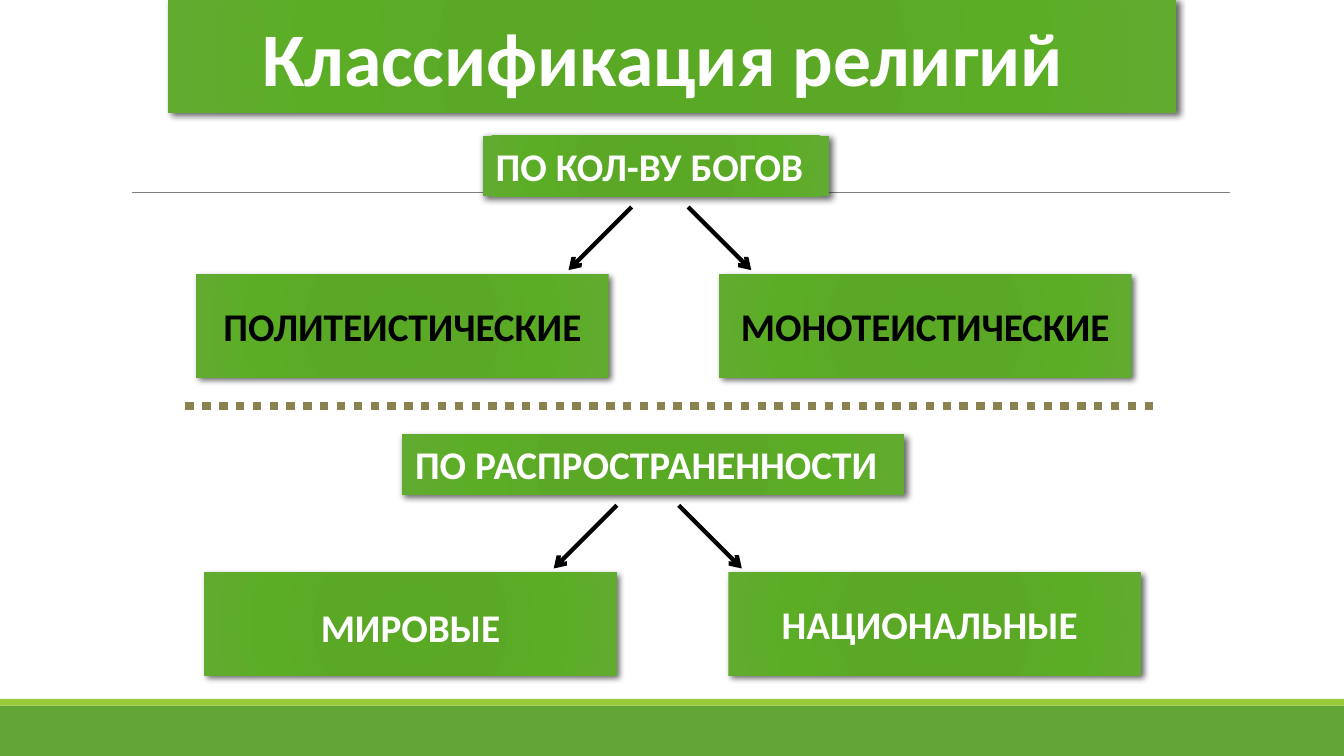
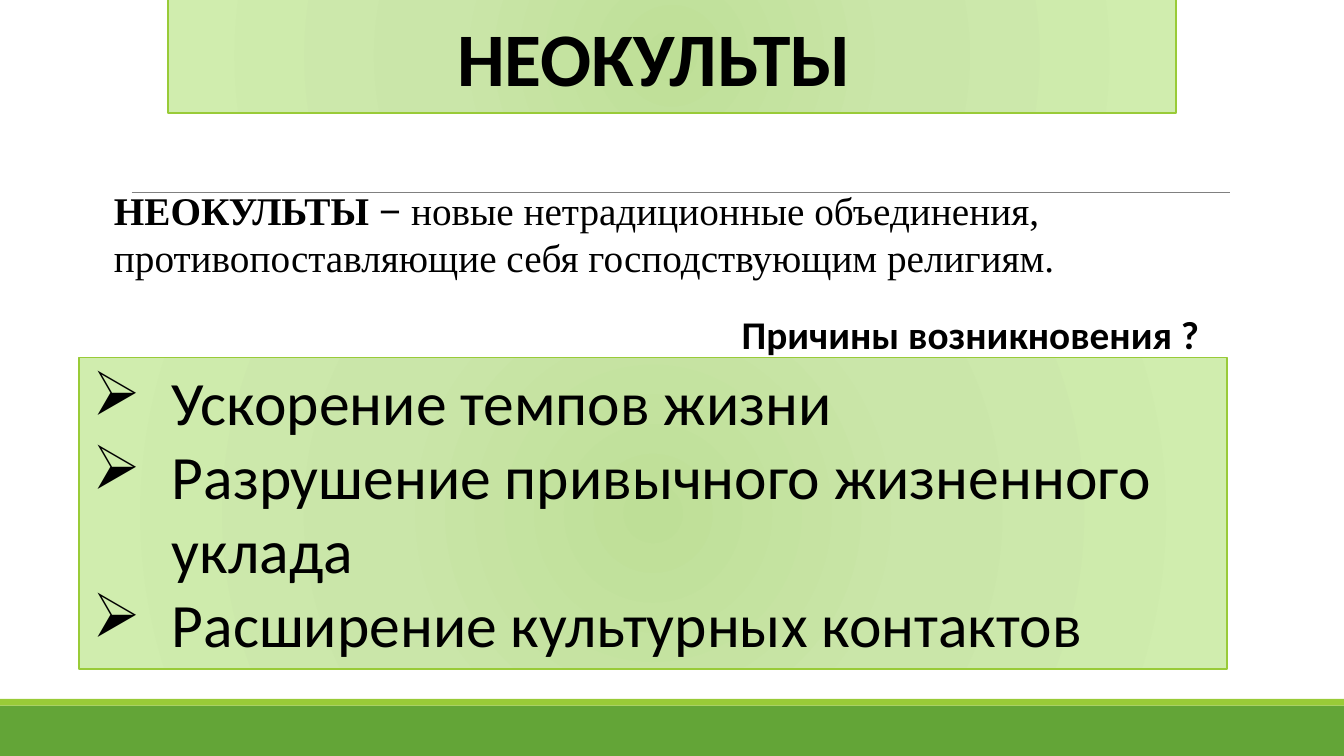
from dataclasses import dataclass

import pptx
import pptx.dml.color
import pptx.enum.dml
import pptx.enum.shapes
import pptx.enum.text
import pptx.oxml
import pptx.oxml.ns
import pptx.util

# The slide is a grid of 100 columns by 56.25 rows, with square cells
COLUMNS, ROWS = 100, 56.25
CELL = pptx.util.Inches(0.1)

ALIGN = pptx.enum.text.PP_ALIGN
ANCHOR = pptx.enum.text.MSO_ANCHOR
NAMESPACE = pptx.oxml.ns.nsdecls("a")


@dataclass(frozen=True)
class Theme:
    white: str = "FFFFFF"
    black: str = "000000"
    band: str = "63A537"
    lime: str = "99CB38"
    rule: str = "808080"
    divider: str = "89814E"
    green: tuple = ((0, "59A924"), (34, "5BA827"), (70, "5BAD25"), (100, "62AB31"))
    pale: tuple = ((0, "BEDF97"), (45, "CAE6A9"), (100, "D0EDAE"))
    sans: str = "Calibri"
    serif: str = "Times New Roman"
    title_size: float = 40.5
    list_size: float = 33
    body_size: float = 21


THEME = Theme()


def cells(count):
    return round(count * CELL)


def rgb(color):
    return pptx.dml.color.RGBColor.from_string(color)


# Effects and fills

def add_effects(shape, shadowed):
    shape.shadow.inherit = False
    if shadowed:
        effects = shape._element.spPr.find(pptx.oxml.ns.qn("a:effectLst"))
        effects.append(pptx.oxml.parse_xml(
            f'<a:outerShdw {NAMESPACE} blurRad="{pptx.util.Pt(3.5)}" dist="{pptx.util.Pt(2)}"'
            ' dir="2700000" algn="tl" rotWithShape="0"><a:srgbClr val="000000">'
            '<a:alpha val="60000"/></a:srgbClr></a:outerShdw>'))


def fill_radial(shape, stops):
    shape.fill.gradient()
    properties = shape._element.spPr
    stop_xml = "".join(
        f'<a:gs pos="{position * 1000}"><a:srgbClr val="{color}"/></a:gs>'
        for position, color in stops)
    gradient = pptx.oxml.parse_xml(
        f'<a:gradFill {NAMESPACE} rotWithShape="1"><a:gsLst>{stop_xml}</a:gsLst>'
        '<a:path path="circle"><a:fillToRect l="50000" t="50000" r="50000" b="50000"/>'
        '</a:path></a:gradFill>')
    properties.replace(properties.find(pptx.oxml.ns.qn("a:gradFill")), gradient)


# Elements

def add_box(slide, area, fill, outline=None, shadowed=False):
    """Rectangle; fill is one colour or a tuple of gradient stops."""
    shape = slide.shapes.add_shape(
        pptx.enum.shapes.MSO_SHAPE.RECTANGLE, *map(cells, area))
    if isinstance(fill, str):
        shape.fill.solid()
        shape.fill.fore_color.rgb = rgb(fill)
    else:
        fill_radial(shape, fill)
    if outline:
        shape.line.color.rgb = rgb(outline)
        shape.line.width = pptx.util.Pt(1)
    else:
        shape.line.fill.background()
    add_effects(shape, shadowed)
    return shape


def add_line(slide, start, end, color, width):
    line = slide.shapes.add_connector(
        pptx.enum.shapes.MSO_CONNECTOR.STRAIGHT, *map(cells, (*start, *end)))
    line.line.color.rgb = rgb(color)
    line.line.width = pptx.util.Pt(width)
    line._element.spPr.append(pptx.oxml.parse_xml(f"<a:effectLst {NAMESPACE}/>"))
    return line


def add_arrow(slide, start, end):
    arrow = add_line(slide, start, end, THEME.black, 2.25)
    arrow.line._get_or_add_ln().append(
        pptx.oxml.parse_xml(f'<a:tailEnd {NAMESPACE} type="arrow"/>'))


def prepare_frame(shape, anchor=ANCHOR.TOP):
    frame = shape.text_frame
    frame.word_wrap = True
    frame.vertical_anchor = anchor
    return frame


def add_run(paragraph, text, size, color, bold=True, font=THEME.sans):
    run = paragraph.add_run()
    run.text = text
    run.font.name = font
    run.font.size = pptx.util.Pt(size)
    run.font.bold = bold
    run.font.color.rgb = rgb(color)


def write_centred(shape, text, size, color, left_shift=0, down_shift=0):
    """Centred text, moved off the middle by uneven insets."""
    frame = prepare_frame(shape, ANCHOR.MIDDLE)
    frame.margin_right += cells(2 * left_shift)
    frame.margin_top += cells(2 * down_shift)
    paragraph = frame.paragraphs[0]
    paragraph.alignment = ALIGN.CENTER
    add_run(paragraph, text, size, color)


def write_left(shape, *runs):
    """Runs are (text, colour, bold, font)."""
    paragraph = prepare_frame(shape).paragraphs[0]
    paragraph.alignment = ALIGN.LEFT
    for text, color, bold, font in runs:
        add_run(paragraph, text, THEME.body_size, color, bold, font)


def write_bullets(shape, items, indent):
    frame = prepare_frame(shape)
    for index, item in enumerate(items):
        paragraph = frame.add_paragraph() if index else frame.paragraphs[0]
        paragraph.alignment = ALIGN.LEFT
        properties = paragraph._p.get_or_add_pPr()
        properties.set("marL", str(cells(indent)))
        properties.set("indent", str(-cells(indent)))
        properties.append(pptx.oxml.parse_xml(f'<a:buChar {NAMESPACE} char="➢"/>'))
        add_run(paragraph, item, THEME.list_size, THEME.black, bold=False)


def add_title(slide, text, color, left_shift, **box_style):
    title = add_box(slide, (12.5, -0.1, 75, 8.5), **box_style)
    write_centred(title, text, THEME.title_size, color, left_shift)


def add_heading(slide, text, area):
    heading = add_box(slide, area, THEME.green, shadowed=True)
    write_left(heading, (text, THEME.white, True, THEME.sans))


def add_category(slide, text, left, top, color, left_shift=0, down_shift=0):
    category = add_box(slide, (left, top, 30.7, 7.7), THEME.green, shadowed=True)
    write_centred(category, text, THEME.body_size, color, left_shift, down_shift)


def add_fork(slide, left, right, top, reach=4.7):
    """Two diagonal arrows leading down and apart."""
    for start, step in ((left, -reach), (right, reach)):
        add_arrow(slide, (start, top), (start + step, top + reach))


def add_text_box(slide, area, *runs):
    write_left(slide.shapes.add_textbox(*map(cells, area)), *runs)


# Slides

def add_base_slide(presentation):
    slide = presentation.slides.add_slide(presentation.slide_layouts[6])
    add_line(slide, (9.8, 14.3), (91.5, 14.3), THEME.rule, 0.5)
    add_box(slide, (0, 52.5, COLUMNS, ROWS - 52.5), THEME.band)
    add_box(slide, (0, 52, COLUMNS, 0.5), THEME.lime)
    return slide


def add_classification_slide(presentation):
    slide = add_base_slide(presentation)
    add_title(slide, "Классификация религий", THEME.white, 0.65,
              fill=THEME.green, shadowed=True)

    # By number of gods
    add_heading(slide, "ПО КОЛ-ВУ БОГОВ", (35.9, 10.1, 25.8, 4.5))
    add_fork(slide, 47, 51.2, 15.4)
    add_category(slide, "ПОЛИТЕИСТИЧЕСКИЕ", 14.6, 20.4, THEME.black)
    add_category(slide, "МОНОТЕИСТИЧЕСКИЕ", 53.5, 20.4, THEME.black)

    divider = add_line(slide, (13.8, 30.2), (85.9, 30.2), THEME.divider, 4.5)
    divider.line.dash_style = pptx.enum.dml.MSO_LINE.ROUND_DOT

    # By spread
    add_heading(slide, "ПО РАСПРОСТРАНЕННОСТИ", (29.9, 32.3, 37.4, 4.5))
    add_fork(slide, 45.9, 50.5, 37.6)
    add_category(slide, "МИРОВЫЕ", 15.2, 42.6, THEME.white, down_shift=0.2)
    add_category(slide, "НАЦИОНАЛЬНЫЕ", 54.2, 42.6, THEME.white, left_shift=0.35)


def add_cults_slide(presentation):
    slide = add_base_slide(presentation)
    pale_style = {"fill": THEME.pale, "outline": THEME.lime}
    add_title(slide, "НЕОКУЛЬТЫ", THEME.black, 1.3, **pale_style)

    # Definition
    add_text_box(
        slide, (7.5, 13.4, 75, 8.1),
        ("НЕОКУЛЬТЫ − ", THEME.black, True, THEME.serif),
        ("новые нетрадиционные объединения, противопоставляющие себя "
         "господствующим религиям.", THEME.black, False, THEME.serif))

    # Causes
    add_text_box(slide, (54.2, 22.6, 37.2, 4.5),
                 ("Причины возникновения ?", THEME.black, True, THEME.sans))
    causes = add_box(slide, (5.9, 26.6, 85.4, 23.2), **pale_style)
    write_bullets(causes, ("Ускорение темпов жизни",
                           "Разрушение привычного жизненного уклада",
                           "Расширение культурных контактов"), indent=5.9)


def main():
    presentation = pptx.Presentation()
    presentation.slide_width = cells(COLUMNS)
    presentation.slide_height = cells(ROWS)
    add_classification_slide(presentation)
    add_cults_slide(presentation)
    presentation.save("out.pptx")


if __name__ == "__main__":
    main()
